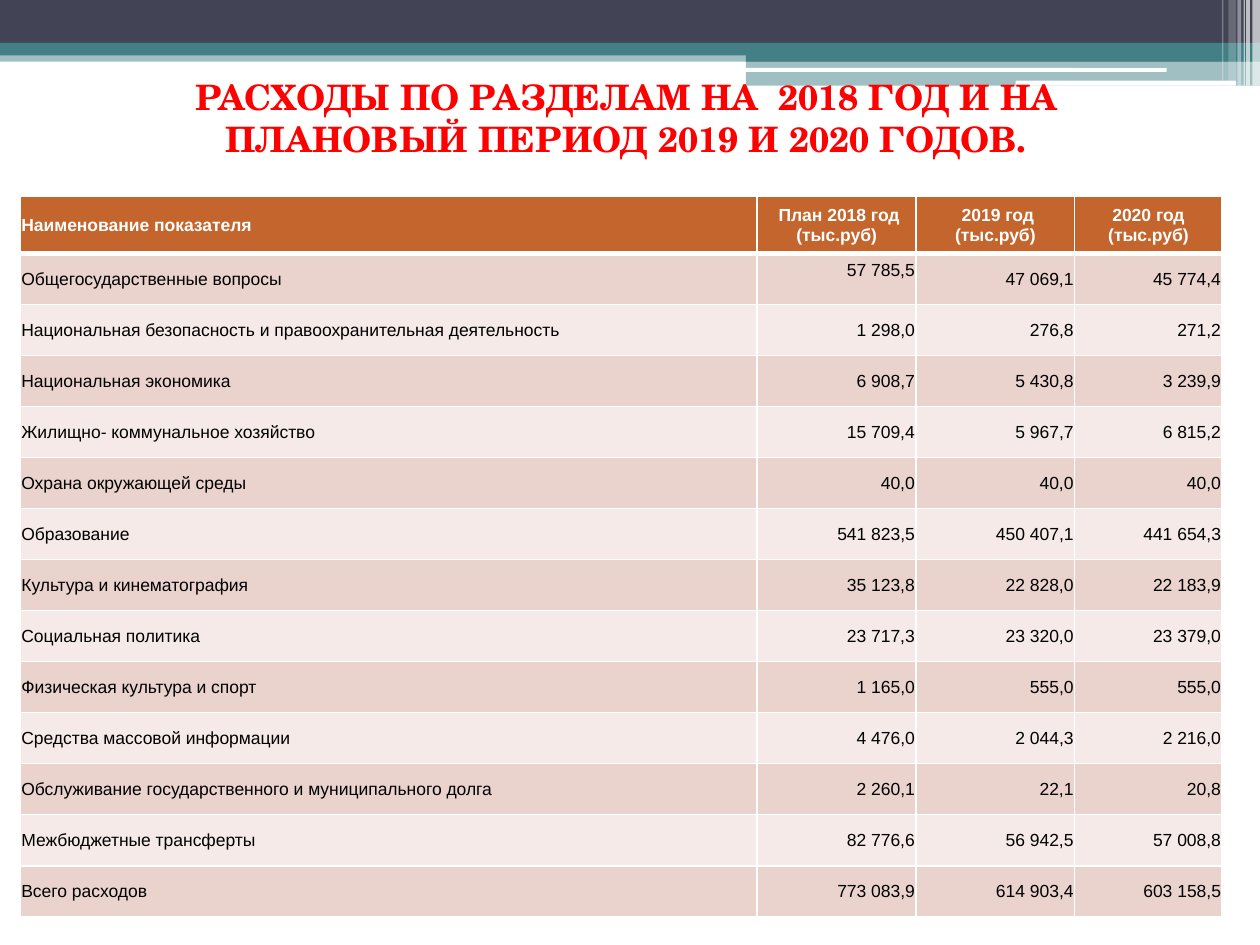
from lxml.etree import SubElement
from pptx import Presentation
from pptx.dml.color import RGBColor
from pptx.enum.shapes import MSO_SHAPE
from pptx.enum.text import MSO_ANCHOR, PP_ALIGN
from pptx.oxml.ns import qn
from pptx.util import Inches, Pt

SLIDE_WIDTH, SLIDE_HEIGHT = 10, 7.5
WHITE, DARK, TEAL = "FFFFFF", "424456", "438086"
HEADER_FILL, BAND_FILLS = "C4652D", ("EAD3CD", "F5EAE8")

TITLE = "РАСХОДЫ ПО РАЗДЕЛАМ НА  2018 ГОД И НА ПЛАНОВЫЙ ПЕРИОД 2019 И 2020 ГОДОВ."
HEADERS = ("Наименование показателя", " План 2018 год (тыс.руб)",
           " 2019 год (тыс.руб)", "2020 год (тыс.руб)")
EXPENSES = (
    ("Общегосударственные вопросы", "57 785,5", "47 069,1", "45 774,4"),
    ("Национальная безопасность и правоохранительная деятельность",
     "1 298,0", "276,8", "271,2"),
    ("Национальная экономика", "6 908,7", "5 430,8", "3 239,9"),
    ("Жилищно- коммунальное хозяйство", "15 709,4", "5 967,7", "6 815,2"),
    ("Охрана окружающей среды", "40,0", "40,0", "40,0"),
    ("Образование", "541 823,5", "450 407,1", "441 654,3"),
    ("Культура и кинематография", "35 123,8", "22 828,0", "22 183,9"),
    ("Социальная политика", "23 717,3", "23 320,0", "23 379,0"),
    ("Физическая культура и спорт", "1 165,0", "555,0", "555,0"),
    ("Средства массовой информации", "4 476,0", "2 044,3", "2 216,0"),
    ("Обслуживание государственного и муниципального долга",
     "2 260,1", "22,1", "20,8"),
    ("Межбюджетные трансферты", "82 776,6", "56 942,5", "57 008,8"),
    ("Всего расходов", "773 083,9", "614 903,4", "603 158,5"),
)
COLUMN_WIDTHS = (5.85, 1.26, 1.26, 1.17)
HEADER_HEIGHT = 0.45


def color(value):
    return RGBColor.from_string(value)


def add_bar(slide, box, fill, opacity=100, kind=MSO_SHAPE.RECTANGLE):
    shape = slide.shapes.add_shape(kind, *map(Inches, box))
    shape.shadow.inherit = False
    shape.line.fill.background()
    shape.fill.solid()
    shape.fill.fore_color.rgb = color(fill)
    if opacity < 100:
        color_element = shape.fill._xPr.find(qn("a:solidFill"))[0]
        SubElement(color_element, qn("a:alpha"), val=str(opacity * 1000))


def add_banner(slide, box):
    left, top, width, height = box
    right = left + width
    step_left = left + 0.592 * width
    step_width = right - step_left
    add_bar(slide, (left, top + 0.4, width, 0.09), TEAL, 50)
    add_bar(slide, (left, top, width, height / 2), DARK)
    add_bar(slide, (left, top + height / 2, width, 0.1), TEAL)
    add_bar(slide, (step_left, top + 0.39, step_width, 0.1), TEAL)
    add_bar(slide, (step_left, top + 0.48, step_width, 0.2), TEAL, 50)
    for offset, drop, length, thickness in ((5.91, 0.54, 3.35, 0.03),
                                            (8.06, 0.64, 1.75, 0.04)):
        add_bar(slide, (left + offset, top + drop, length, thickness), WHITE,
                kind=MSO_SHAPE.ROUNDED_RECTANGLE)
    # Distance from the right edge, width, height, opacity
    for distance, stripe_width, stripe_height, opacity in (
            (0.06, 0.06, height, 65), (0.11, 0.03, height, 65),
            (0.13, 0.01, height, 60), (0.18, 0.03, height, 40),
            (0.25, 0.06, height - 0.04, 20), (0.3, 0.01, height - 0.04, 30)):
        add_bar(slide, (right - distance, top, stripe_width, stripe_height),
                WHITE, opacity)


def add_title(slide, box):
    text_frame = slide.shapes.add_textbox(*map(Inches, box)).text_frame
    text_frame.word_wrap = True
    text_frame.vertical_anchor = MSO_ANCHOR.MIDDLE
    paragraph = text_frame.paragraphs[0]
    paragraph.text = TITLE
    paragraph.alignment = PP_ALIGN.CENTER
    font = paragraph.font
    font.name, font.size, font.bold = "TeX Gyre Schola", Pt(20), True
    font.color.rgb = color("FF0000")


def set_borders(cell, top=1, bottom=1):
    properties = cell._tc.get_or_add_tcPr()
    sides = (("L", 1), ("R", 1), ("T", top), ("B", bottom))
    for position, (side, points) in enumerate(sides):
        line = SubElement(properties, qn(f"a:ln{side}"), w=str(Pt(points)))
        fill = SubElement(line, qn("a:solidFill"))
        SubElement(fill, qn("a:srgbClr"), val=WHITE)
        properties.insert(position, line)


def fill_cell(cell, text, fill, alignment, is_header):
    cell.fill.solid()
    cell.fill.fore_color.rgb = color(fill)
    cell.vertical_anchor = MSO_ANCHOR.MIDDLE
    cell.margin_left = cell.margin_right = cell.margin_top = Inches(0.01)
    cell.margin_bottom = 0
    paragraph = cell.text_frame.paragraphs[0]
    paragraph.text = text
    paragraph.alignment = alignment
    font = paragraph.font
    font.name, font.size, font.bold = "Arial", Pt(10), is_header
    font.color.rgb = color(WHITE if is_header else "000000")


def add_expense_table(slide, box):
    rows = (HEADERS, *EXPENSES)
    table = slide.shapes.add_table(len(rows), len(HEADERS),
                                   *map(Inches, box)).table
    for column, width in zip(table.columns, COLUMN_WIDTHS):
        column.width = Inches(width)
    body_height = (box[3] - HEADER_HEIGHT) / len(EXPENSES)
    for row_index, values in enumerate(rows):
        is_header = row_index == 0
        table.rows[row_index].height = Inches(
            HEADER_HEIGHT if is_header else body_height)
        fill = HEADER_FILL if is_header else BAND_FILLS[(row_index - 1) % 2]
        value_alignment = PP_ALIGN.CENTER if is_header else PP_ALIGN.RIGHT
        for column_index, text in enumerate(values):
            cell = table.cell(row_index, column_index)
            alignment = value_alignment if column_index else PP_ALIGN.LEFT
            fill_cell(cell, text, fill, alignment, is_header)
            set_borders(cell, top=3 if row_index == 1 else 1,
                        bottom=3 if is_header else 1)
    # The first planned amount sits above the middle of its row
    table.cell(1, 1).margin_bottom = Inches(0.14)


def main():
    presentation = Presentation()
    presentation.slide_width = Inches(SLIDE_WIDTH)
    presentation.slide_height = Inches(SLIDE_HEIGHT)
    slide = presentation.slides.add_slide(presentation.slide_layouts[6])
    add_banner(slide, (0, 0, SLIDE_WIDTH, 0.68))
    add_title(slide, (0.47, 0.31, 9, 1.25))
    add_expense_table(slide, (0.16, 1.56, sum(COLUMN_WIDTHS), 5.72))
    presentation.save("out.pptx")


if __name__ == "__main__":
    main()
